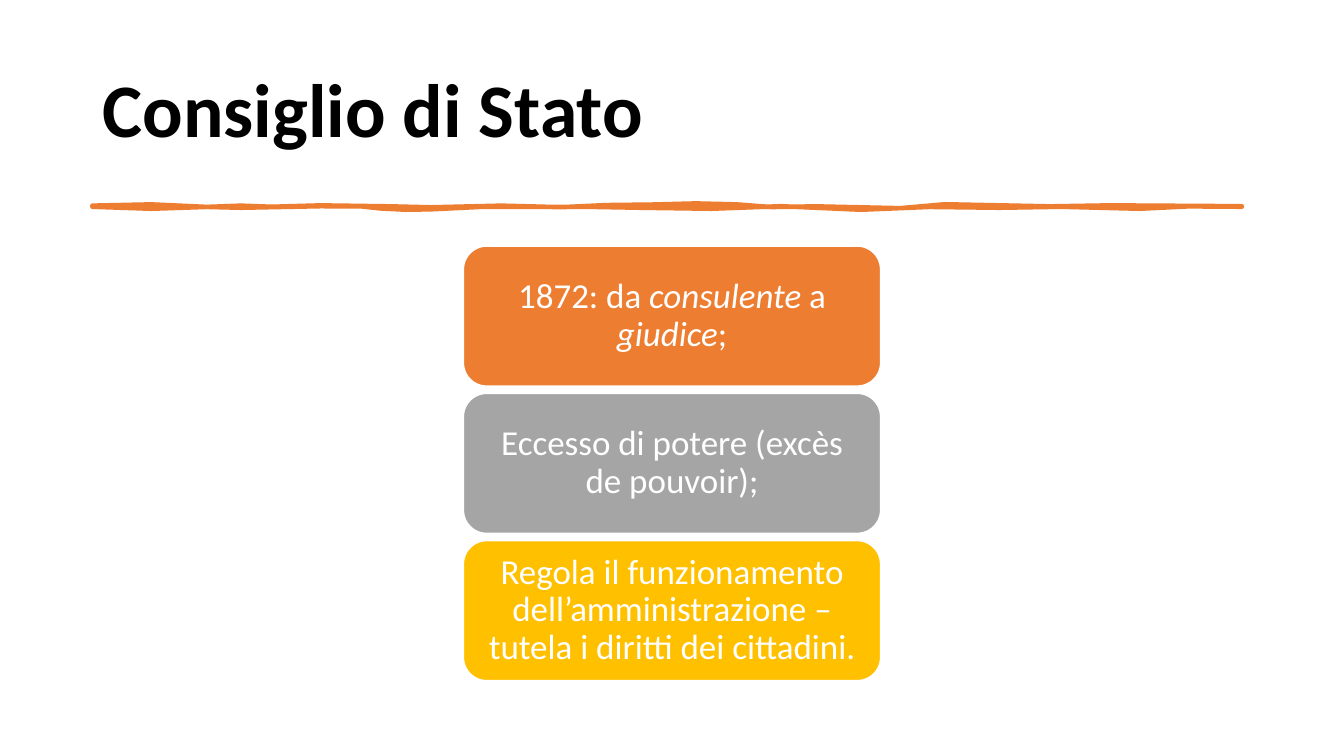
from lxml.etree import SubElement
from pptx import Presentation
from pptx.dml.color import RGBColor
from pptx.enum.shapes import MSO_SHAPE
from pptx.enum.text import MSO_ANCHOR, PP_ALIGN
from pptx.oxml.ns import qn
from pptx.util import Pt

COLORS = {"black": "000000", "white": "FFFFFF", "orange": "ED7D31",
          "gray": "A5A5A5", "gold": "FFC000"}
TITLE_FONT = {"name": "Calibri", "size": Pt(54), "bold": True}
CARD_FONT = {"name": "Calibri", "size": Pt(25)}
CARDS = [
    ("orange", [("1872: da ", False), ("consulente", True), (" a ", False),
                ("giudice", True), (";", False)]),
    ("gray", [("Eccesso di potere (excès de pouvoir);", False)]),
    ("gold", [("Regola il funzionamento dell’amministrazione – "
               "tutela i diritti dei cittadini.", False)]),
]
BRUSH_TOP = [(0, 0), (42, -0.9), (82, 0.9), (106, 0), (128, 0.8), (163, -0.2),
             (213, 0.5), (242, 1.2), (292, 0), (335, 1.1), (367, -0.4),
             (400, -0.8), (431, -1.6), (460, -0.9), (485, 1), (517, 0.5),
             (577, 1.8), (609, -1), (684, 0.5), (727, -0.2), (821, 0.4)]
BRUSH_BOTTOM = [(821, 0.8), (783, 0.5), (748, 2.2), (692, 0.8), (648, 1.5),
                (598, 0.9), (549, 2.9), (492, 0.4), (442, 2.2), (392, 1.5),
                (352, 0.8), (277, 0.9), (242, 2.6), (224, 2.9), (206, 2),
                (192, 0.5), (163, 0.4), (106, 1.5), (82, 0.9), (42, 2.2),
                (0, 0.8)]


def rgb(color):
    """Return the named colour."""
    return RGBColor.from_string(COLORS[color])


def format_font(font, values, color):
    """Apply font values and a colour."""
    for key, value in values.items():
        setattr(font, key, value)
    font.color.rgb = rgb(color)


def paint(shape, fill, line, weight):
    """Set fill and line and switch the shadow off."""
    shape.shadow.inherit = False
    shape.fill.solid()
    shape.fill.fore_color.rgb = rgb(fill)
    shape.line.color.rgb = rgb(line)
    shape.line.width = Pt(weight)


def add_heading(slide, left, top, width, height):
    """Place and format the slide title."""
    title = slide.shapes.title
    box = {"left": left, "top": top, "width": width, "height": height}
    for key, value in box.items():
        setattr(title, key, Pt(value))
    title.text_frame.vertical_anchor = MSO_ANCHOR.MIDDLE
    paragraph = title.text_frame.paragraphs[0]
    paragraph.alignment = PP_ALIGN.LEFT
    paragraph.line_spacing = 0.9
    run = paragraph.add_run()
    run.text = "Consiglio di Stato"
    format_font(run.font, TITLE_FONT, "black")


def add_brush_rule(slide, left, top):
    """Draw the uneven brush stroke under the title."""
    start, *outline = [(Pt(left + x), Pt(top + y))
                       for x, y in BRUSH_TOP + BRUSH_BOTTOM]
    builder = slide.shapes.build_freeform(*start)
    builder.add_line_segments(outline, close=True)
    brush = builder.convert_to_shape()
    paint(brush, "orange", "orange", 3.25)
    SubElement(brush.line._get_or_add_ln(), qn("a:round"))


def add_cards(slide, left, top, width, height, gap):
    """Stack the rounded cards, sharing the height equally."""
    card_height = (height - gap * (len(CARDS) - 1)) / len(CARDS)
    for index, (fill, phrases) in enumerate(CARDS):
        card_top = top + index * (card_height + gap)
        card = slide.shapes.add_shape(
            MSO_SHAPE.ROUNDED_RECTANGLE,
            Pt(left), Pt(card_top), Pt(width), Pt(card_height))
        paint(card, fill, "white", 1)
        frame = card.text_frame
        frame.word_wrap = True
        frame.vertical_anchor = MSO_ANCHOR.MIDDLE
        paragraph = frame.paragraphs[0]
        paragraph.alignment = PP_ALIGN.CENTER
        paragraph.line_spacing = 0.9
        for text, italic in phrases:
            run = paragraph.add_run()
            run.text = text
            format_font(run.font, CARD_FONT | {"italic": italic}, "white")


def main():
    """Build and save the slide."""
    deck = Presentation()
    deck.slide_width, deck.slide_height = Pt(960), Pt(540)
    slide = deck.slides.add_slide(deck.slide_layouts[5])
    add_heading(slide, 66, 28.8, 828, 104.4)
    add_brush_rule(slide, 66, 146.9)
    add_cards(slide, 331, 175.8, 298, 310.4, 5.2)
    deck.save("out.pptx")


if __name__ == "__main__":
    main()
